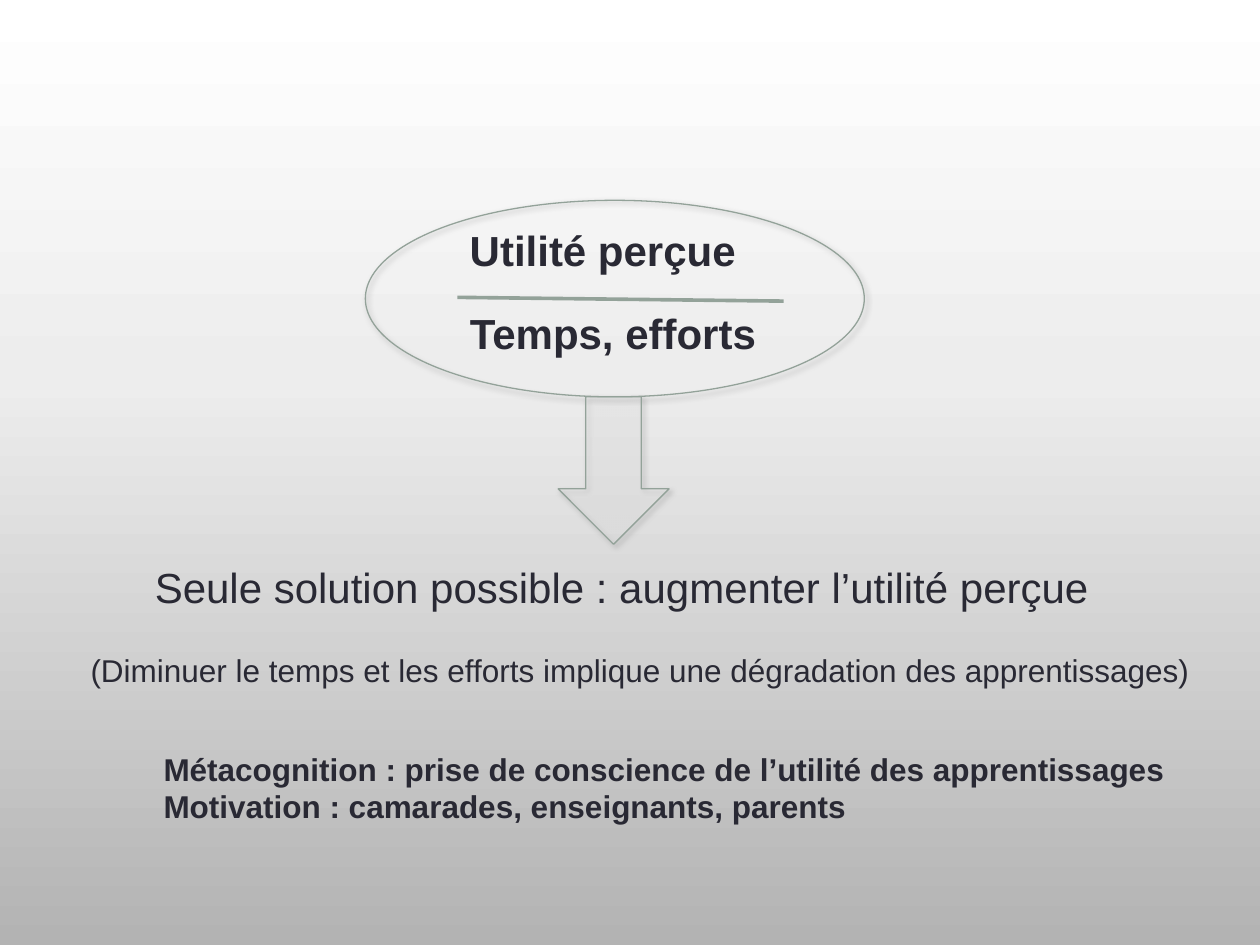
from copy import deepcopy

from lxml import etree
from pptx import Presentation
from pptx.dml.color import RGBColor
from pptx.enum.shapes import MSO_CONNECTOR, MSO_SHAPE
from pptx.enum.text import MSO_AUTO_SIZE
from pptx.oxml import parse_xml
from pptx.oxml.ns import nsdecls, qn
from pptx.util import Inches, Pt

STRAIGHT = MSO_CONNECTOR.STRAIGHT
ELLIPSE = MSO_SHAPE.OVAL
DOWN_ARROW = MSO_SHAPE.DOWN_ARROW
FIT_SHAPE = MSO_AUTO_SIZE.SHAPE_TO_FIT_TEXT

INK = RGBColor(0x29, 0x29, 0x34)
SAGE = RGBColor(0x93, 0xA2, 0x99)
WHITE = RGBColor(0xFF, 0xFF, 0xFF)
PALE_GREY = RGBColor(0xED, 0xED, 0xED)
MID_GREY = RGBColor(0xB3, 0xB3, 0xB3)

LARGE = {"name": "Arial", "size": Pt(24), "bold": False}
LARGE_BOLD = {**LARGE, "bold": True}
SMALL = {**LARGE, "size": Pt(18)}
SMALL_BOLD = {**SMALL, "bold": True}

SHADOW = (
    f'<a:effectLst {nsdecls("a")}>'
    '<a:outerShdw blurRad="38100" dist="25400" dir="2700000" rotWithShape="0">'
    '<a:srgbClr val="808080"><a:alpha val="60000"/></a:srgbClr>'
    "</a:outerShdw></a:effectLst>"
)


def paint_background(slide):
    fill = slide.background.fill
    fill.gradient()
    fill.gradient_angle = 270
    first = fill._fill._gradFill.find(qn("a:gsLst"))[0]
    first.addnext(deepcopy(first))
    colours = ((0, WHITE), (0.4, PALE_GREY), (1, MID_GREY))
    for stop, (position, colour) in zip(fill.gradient_stops, colours):
        stop.position = position
        stop.color.rgb = colour


def add_text(slide, box, lines, style):
    frame = slide.shapes.add_textbox(*map(Inches, box)).text_frame
    frame.word_wrap = False
    frame.auto_size = FIT_SHAPE
    frame.text = "\n".join(lines)
    for paragraph in frame.paragraphs:
        font = paragraph.runs[0].font
        font.color.rgb = INK
        for attribute, value in style.items():
            setattr(font, attribute, value)


def add_outline(slide, preset, box):
    outline = slide.shapes.add_shape(preset, *map(Inches, box))
    outline.fill.background()
    outline.line.color.rgb = SAGE
    outline.line.width = Pt(0.75)
    outline._element.spPr.append(parse_xml(SHADOW))
    return outline


def add_fraction(slide, box):
    left, top, width, height = box
    add_outline(slide, ELLIPSE, box)
    term_left = left + 0.73
    add_text(slide, (term_left, top + 0.14, 2.33, 0.5), ["Utilité perçue"], LARGE_BOLD)
    add_text(slide, (term_left, top + 0.8, 2.59, 0.5), ["Temps, efforts"], LARGE_BOLD)
    ends = (term_left, top + 0.77, term_left + 2.59, top + 0.8)
    fraction_bar = slide.shapes.add_connector(STRAIGHT, *map(Inches, ends))
    fraction_bar.line.color.rgb = SAGE
    fraction_bar.line.width = Pt(2.08)
    etree.SubElement(fraction_bar._element.spPr, qn("a:effectLst"))


def add_consequence_arrow(slide, box):
    arrow = add_outline(slide, DOWN_ARROW, box)
    arrow.fill.solid()
    arrow.fill.fore_color.rgb = WHITE
    white = arrow._element.spPr.find(qn("a:solidFill"))[0]
    etree.SubElement(white, qn("a:alpha")).set("val", "17000")


def add_conclusions(slide, box):
    left, top, width, height = box
    add_text(slide, (left + 0.51, top, 7.69, 0.51),
             ["Seule solution possible : augmenter l’utilité perçue"], LARGE)
    add_text(slide, (left, top + 0.71, width, 0.4),
             ["(Diminuer le temps et les efforts implique une dégradation des apprentissages)"], SMALL)
    add_text(slide, (left + 0.58, top + height - 0.71, 8.23, 0.71),
             ["Métacognition : prise de conscience de l’utilité des apprentissages",
              "Motivation : camarades, enseignants, parents"], SMALL_BOLD)


def main():
    presentation = Presentation()
    presentation.slide_width = Inches(10)
    presentation.slide_height = Inches(7.5)
    slide = presentation.slides.add_slide(presentation.slide_layouts[6])
    paint_background(slide)
    add_fraction(slide, (2.9, 1.59, 3.96, 1.56))
    add_consequence_arrow(slide, (4.43, 3.15, 0.88, 1.17))
    add_conclusions(slide, (0.62, 4.41, 9.01, 2.2))
    presentation.save("out.pptx")


if __name__ == "__main__":
    main()
